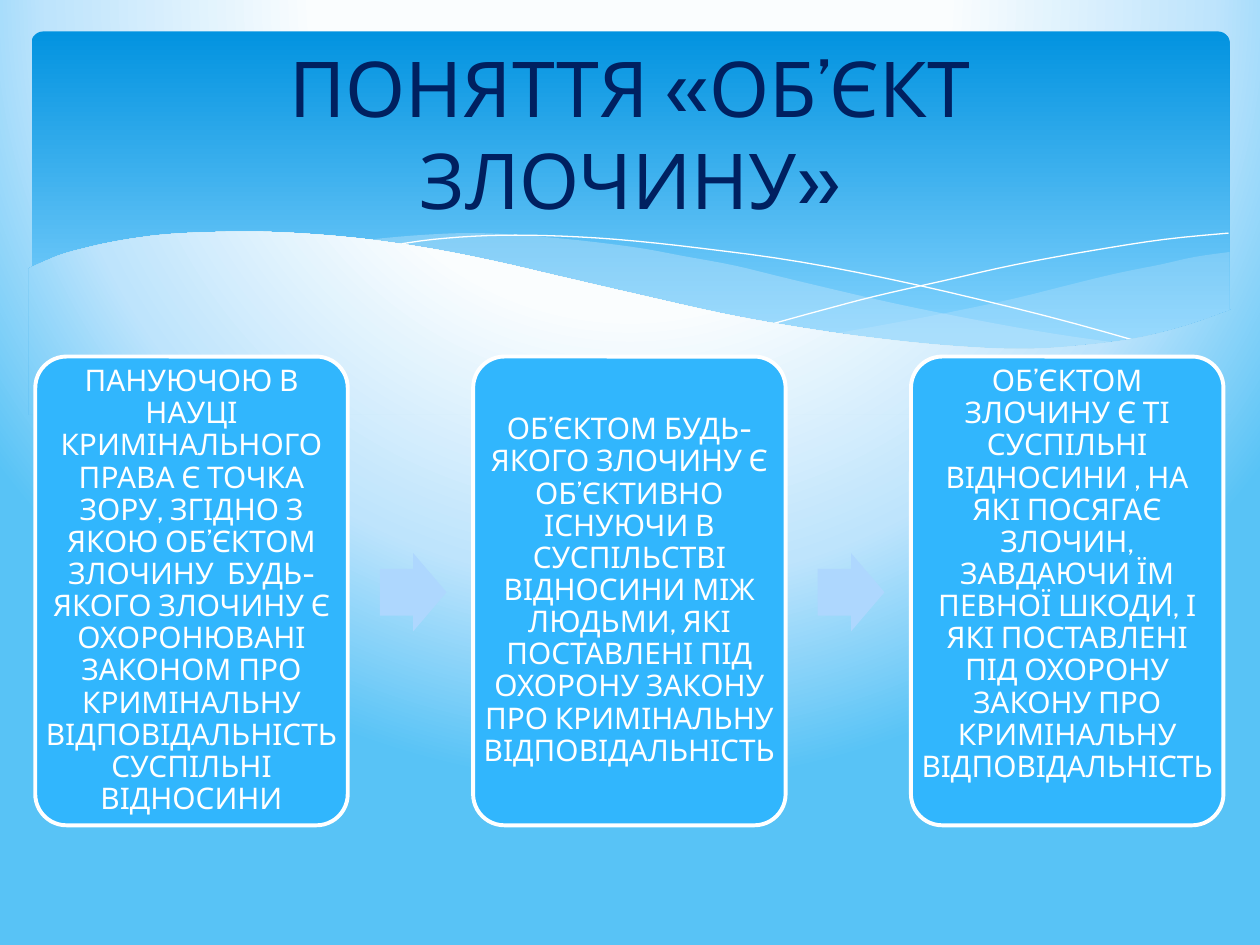
from pptx import Presentation
from pptx.dml.color import RGBColor
from pptx.enum.shapes import MSO_SHAPE
from pptx.enum.text import MSO_ANCHOR, PP_ALIGN
from pptx.oxml import parse_xml
from pptx.oxml.ns import nsdecls, qn
from pptx.util import Inches, Pt
from lxml import etree

ROUND, ARROW = MSO_SHAPE.ROUNDED_RECTANGLE, MSO_SHAPE.RIGHT_ARROW
MIDDLE, CENTER = MSO_ANCHOR.MIDDLE, PP_ALIGN.CENTER
COLORS = {
    "bg_inner": "FAFDFE", "bg_mid": "BEE4FC", "bg_outer": "58C3F6",
    "bar_top": "0293E0", "bar_bottom": "83D3FE", "wave": "C6E7FC",
    "box": "31B6FD", "arrow": "AED7FE", "white": "FFFFFF", "title": "002060",
}
FONT = "Cabin"

RIGHT_WAVE = [
    [(9.76, 2), (9.48, 2.04), (9.21, 2.1), (8.91, 2.16), (8.61, 2.23), (8.05, 2.37),
     (7.53, 2.48), (7.06, 2.57), (6.61, 2.65)],
    [(6.61, 2.65), (6.91, 2.69), (7.19, 2.72), (7.57, 2.76), (8.03, 2.78), (8.44, 2.77),
     (8.81, 2.73), (9.21, 2.65), (9.49, 2.57), (9.76, 2.47)],
]
LEFT_WAVE = [
    [(8.93, 2.73), (8.37, 2.65), (7.75, 2.54), (7.06, 2.4), (6.29, 2.22), (5.84, 2.11),
     (5.41, 2.03), (5.02, 1.96), (4.42, 1.89), (3.8, 1.85), (3.28, 1.87), (2.86, 1.91)],
    [(2.86, 1.91), (3.42, 1.99), (4.04, 2.11), (4.49, 2.22), (5.3, 2.4), (6.01, 2.55),
     (6.65, 2.66), (7.22, 2.74), (7.73, 2.77), (8.18, 2.78), (8.57, 2.77), (8.93, 2.73)],
]
FALLING_LINE = [
    [(3.09, 1.95), (3.44, 1.9), (3.87, 1.87), (4.33, 1.87), (4.89, 1.9), (5.56, 1.97),
     (6.36, 2.08), (7.27, 2.26), (8.31, 2.51), (9.07, 2.72)],
]
RISING_LINE = [
    [(6.13, 2.57), (6.53, 2.46), (6.95, 2.35), (7.48, 2.23), (8.06, 2.1), (8.66, 1.99),
     (9.24, 1.9), (9.75, 1.85)],
]
LOWER_WAVE = [
    [(9.77, 2.46), (9.4, 2.59), (8.99, 2.69), (8.5, 2.75), (8.09, 2.77), (7.61, 2.75),
     (7.08, 2.7), (6.48, 2.62), (5.79, 2.5), (5.03, 2.33), (4.47, 2.2), (3.91, 2.07),
     (3.4, 1.97), (2.92, 1.9), (2.5, 1.86), (2.11, 1.84), (1.77, 1.84), (1.32, 1.86),
     (0.95, 1.91), (0.67, 1.97), (0.46, 2.03), (0.23, 2.13)],
    [(0.23, 3.29), (9.77, 3.29)],
]
STATEMENTS = [
    "ПАНУЮЧОЮ В НАУЦІ КРИМІНАЛЬНОГО ПРАВА Є ТОЧКА ЗОРУ, ЗГІДНО З ЯКОЮ ОБ’ЄКТОМ "
    "ЗЛОЧИНУ  БУДЬ-ЯКОГО ЗЛОЧИНУ Є ОХОРОНЮВАНІ ЗАКОНОМ ПРО КРИМІНАЛЬНУ "
    "ВІДПОВІДАЛЬНІСТЬ СУСПІЛЬНІ ВІДНОСИНИ",
    "ОБ’ЄКТОМ БУДЬ-ЯКОГО ЗЛОЧИНУ Є ОБ’ЄКТИВНО ІСНУЮЧИ В СУСПІЛЬСТВІ ВІДНОСИНИ МІЖ "
    "ЛЮДЬМИ, ЯКІ ПОСТАВЛЕНІ ПІД ОХОРОНУ ЗАКОНУ ПРО КРИМІНАЛЬНУ ВІДПОВІДАЛЬНІСТЬ",
    "ОБ’ЄКТОМ ЗЛОЧИНУ Є ТІ СУСПІЛЬНІ ВІДНОСИНИ , НА ЯКІ ПОСЯГАЄ ЗЛОЧИН, ЗАВДАЮЧИ ЇМ "
    "ПЕВНОЇ ШКОДИ, І ЯКІ ПОСТАВЛЕНІ ПІД ОХОРОНУ ЗАКОНУ ПРО КРИМІНАЛЬНУ "
    "ВІДПОВІДАЛЬНІСТЬ  ",
]


def rgb(name):
    return RGBColor.from_string(COLORS[name])


def smooth(points, steps=4):
    ends = [points[0], *points, points[-1]]
    curve = [points[0]]
    for a, b, c, d in zip(ends, ends[1:], ends[2:], ends[3:]):
        for t in (i / steps for i in range(1, steps + 1)):
            curve.append(tuple(
                b[k] + t / 2 * (c[k] - a[k]
                                + t * (2 * a[k] - 5 * b[k] + 4 * c[k] - d[k])
                                + t * t * (3 * b[k] - a[k] - 3 * c[k] + d[k]))
                for k in (0, 1)))
    return curve


class Painter:
    def __init__(self, slide):
        self.s = slide

    def background(self):
        self.s.background.fill.gradient()
        stops = "".join(
            f'<a:gs pos="{pos * 1000}"><a:srgbClr val="{COLORS[name]}"/></a:gs>'
            for pos, name in ((40, "bg_inner"), (74, "bg_mid"), (100, "bg_outer")))
        grad = self.s.element.find(".//" + qn("a:gradFill"))
        grad.getparent().replace(grad, parse_xml(
            f'<a:gradFill {nsdecls("a")}><a:gsLst>{stops}</a:gsLst><a:path path="circle">'
            '<a:fillToRect l="20000" t="-40000" r="20000" b="140000"/></a:path></a:gradFill>'))

    def style(self, sp, fill=None, line=None, width=0):
        sp.shadow.inherit = False
        if fill:
            sp.fill.solid()
            sp.fill.fore_color.rgb = rgb(fill)
        else:
            sp.fill.background()
        if line:
            sp.line.color.rgb = rgb(line)
            sp.line.width = Pt(width)
        else:
            sp.line.fill.background()

    def shape(self, kind, box, adj, **look):
        sp = self.s.shapes.add_shape(kind, *map(Inches, box))
        for i, value in enumerate(adj):
            sp.adjustments[i] = value
        self.style(sp, **look)
        return sp

    def bar(self, box):
        sp = self.shape(ROUND, box, [0.034])
        sp.fill.gradient()
        sp.fill.gradient_angle = 270
        for stop, pos, name in zip(sp.fill.gradient_stops, (0, 0.9), ("bar_top", "bar_bottom")):
            stop.color.rgb = rgb(name)
            stop.position = pos

    def curve(self, curves, close=True, **look):
        points = [(Inches(x), Inches(y)) for part in curves for x, y in smooth(part)]
        builder = self.s.shapes.build_freeform(*points[0])
        builder.add_line_segments(points[1:], close=close)
        sp = builder.convert_to_shape()
        self.style(sp, **look)
        return sp

    def wave(self, curves, alpha):
        sp = self.curve(curves, fill="wave")
        color = sp.element.spPr.find(".//" + qn("a:srgbClr"))
        etree.SubElement(color, qn("a:alpha"), val=str(alpha * 1000))

    def cutout(self, curves):
        sp = self.curve(curves)
        sp.element.set("useBgFill", "1")
        sp.element.spPr.remove(sp.element.spPr.find(qn("a:noFill")))
        sp.element.remove(sp.element.find(qn("p:style")))

    def text(self, sp, text, size, color, inset=0, spacing=1):
        tf = sp.text_frame
        frame = {"word_wrap": True, "vertical_anchor": MIDDLE}
        for side in ("left", "right", "top", "bottom"):
            frame["margin_" + side] = Inches(inset)
        p = tf.paragraphs[0]
        r = p.add_run()
        r.text = text
        r.font.color.rgb = rgb(color)
        for obj, values in ((tf, frame),
                            (p, {"alignment": CENTER, "line_spacing": spacing}),
                            (r.font, {"name": FONT, "size": Pt(size)})):
            for name, value in values.items():
                setattr(obj, name, value)

    def title(self, text, box):
        sp = self.s.shapes.add_textbox(*map(Inches, box))
        self.text(sp, text, 44, "title", inset=0.1)


def main():
    prs = Presentation()
    prs.slide_width, prs.slide_height = Inches(10), Inches(7.5)
    d = Painter(prs.slides.add_slide(prs.slide_layouts[6]))

    d.background()
    d.bar((0.25, 0.25, 9.51, 2.7))
    d.wave(RIGHT_WAVE, 29)
    d.wave(LEFT_WAVE, 40)
    for line in (FALLING_LINE, RISING_LINE):
        d.curve(line, close=False, line="white")
    d.cutout(LOWER_WAVE)

    left, pitch = 0.28, 3.475
    for i, text in enumerate(STATEMENTS):
        x = left + i * pitch
        if i:
            d.shape(ARROW, (x - 0.74, 4.39, 0.53, 0.62), [0.6, 0.5], fill="arrow")
        sp = d.shape(ROUND, (x, 2.83, 2.48, 3.72), [0.1], fill="box", line="white", width=2.25)
        d.text(sp, text, 17, "white", spacing=0.9)

    d.title("ПОНЯТТЯ «ОБ’ЄКТ ЗЛОЧИНУ»", (0.5, 0.37, 9, 1.37))
    prs.save("out.pptx")


if __name__ == "__main__":
    main()
